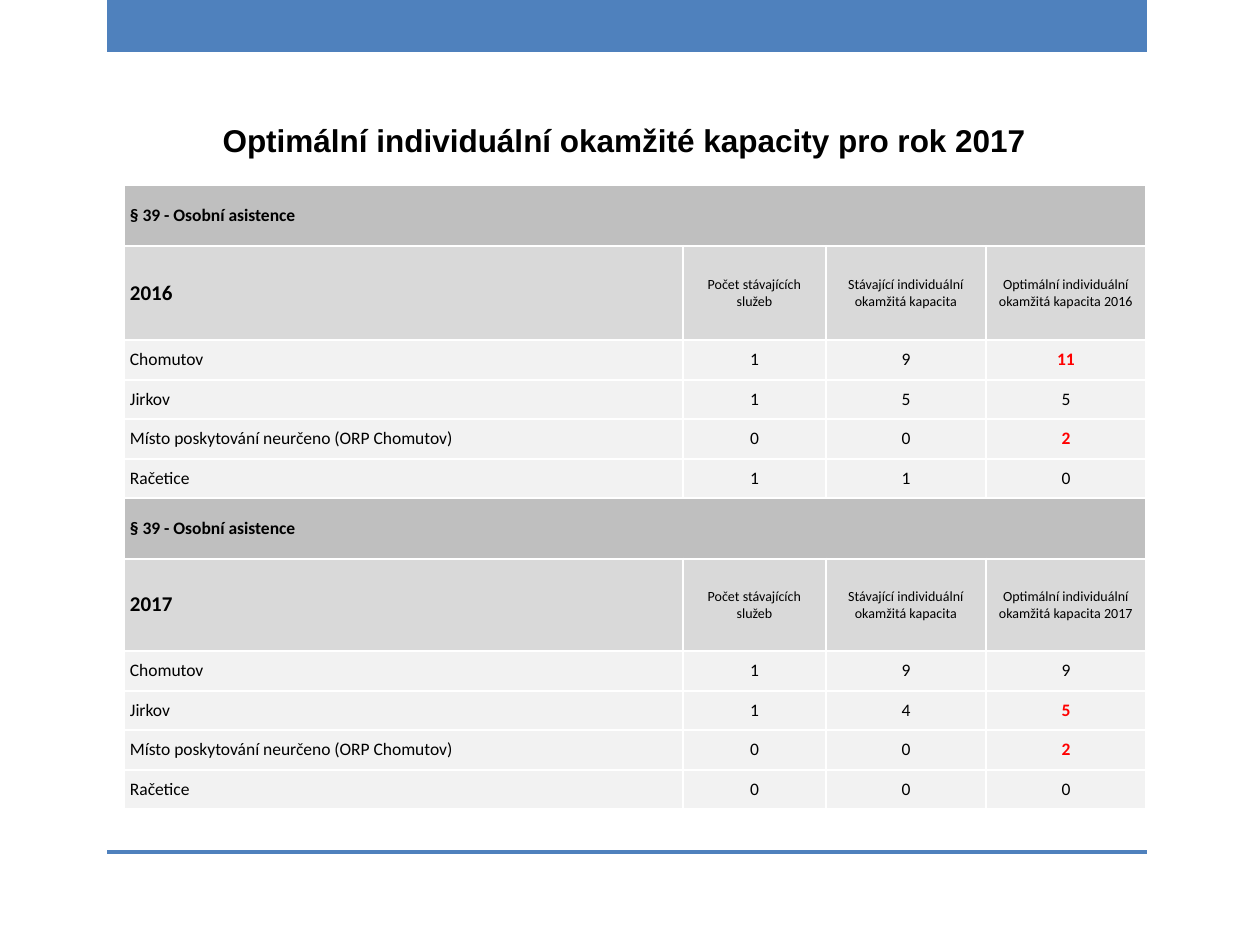
from lxml.etree import SubElement
from pptx import Presentation
from pptx.dml.color import RGBColor
from pptx.enum.shapes import MSO_SHAPE as SHAPE
from pptx.enum.text import MSO_ANCHOR as ANCHOR, PP_ALIGN as ALIGN
from pptx.oxml.ns import qn
from pptx.util import Pt

PX = 914400 / 126
BLUE, BLACK, RED, WHITE = "4F81BD", "000000", "FF0000", "FFFFFF"
SECTION_GRAY, HEADER_GRAY, ROW_GRAY = "BFBFBF", "D9D9D9", "F2F2F2"


def px(*lengths):
    """Turn pixel lengths into a list of EMU."""
    return [round(length * PX) for length in lengths]


def write(frame, text, size=10, bold=False, color=BLACK, font="Calibri", align=ALIGN.LEFT):
    paragraph = frame.paragraphs[0]
    paragraph.alignment = align
    run = paragraph.add_run()
    run.text = text
    run.font.name, run.font.size, run.font.bold = font, Pt(size), bold
    run.font.color.rgb = RGBColor.from_string(color)


prs = Presentation()
prs.slide_width, prs.slide_height = px(1260, 945)
slide = prs.slides.add_slide(prs.slide_layouts[5])

# Bands at the top and bottom of the page
for top, height in [(0, 52), (850, 4)]:
    band = slide.shapes.add_shape(SHAPE.RECTANGLE, *px(107, top, 1040, height))
    band.shadow.inherit = False
    band.fill.solid()
    band.fill.fore_color.rgb = RGBColor.from_string(BLUE)
    band.line.fill.background()

title = slide.shapes.title
title.left, title.top, title.width, title.height = px(210, 76, 912, 127)
title.text_frame.vertical_anchor = ANCHOR.MIDDLE
write(title.text_frame, "Optimální individuální okamžité kapacity pro rok 2017",
      size=18, bold=True, font="Arial")

# Capacities by place: services, current and optimal; red marks the highlighted optimum
years = {
    "2016": [("Chomutov", 1, 9, 11, RED),
             ("Jirkov", 1, 5, 5, BLACK),
             ("Místo poskytování neurčeno (ORP Chomutov)", 0, 0, 2, RED),
             ("Račetice", 1, 1, 0, BLACK)],
    "2017": [("Chomutov", 1, 9, 9, BLACK),
             ("Jirkov", 1, 4, 5, RED),
             ("Místo poskytování neurčeno (ORP Chomutov)", 0, 0, 2, RED),
             ("Račetice", 0, 0, 0, BLACK)],
}
row_heights = [61, 94, 40, 39, 40, 39, 61, 92, 40, 39, 40, 39]
column_widths = [559, 143, 160, 160]

table_frame = slide.shapes.add_table(
    len(row_heights), len(column_widths),
    *px(124, 185, sum(column_widths), sum(row_heights)))
capacities = table_frame.table
capacities.first_row = capacities.horz_banding = False
for row, height in zip(capacities.rows, px(*row_heights)):
    row.height = height
for column, width in zip(capacities.columns, px(*column_widths)):
    column.width = width

block_rows = len(row_heights) // len(years)
fills = [SECTION_GRAY, HEADER_GRAY] + [ROW_GRAY] * (block_rows - 2)
for r, row in enumerate(capacities.rows):
    for cell in row.cells:
        cell.margin_left, cell.margin_right = px(6, 6)
        cell.margin_top = cell.margin_bottom = 0
        cell.vertical_anchor = ANCHOR.MIDDLE
        properties = cell._tc.get_or_add_tcPr()
        for side in ("a:lnL", "a:lnR", "a:lnT", "a:lnB"):
            border = SubElement(properties, qn(side), w=str(Pt(1.5)))
            border_fill = SubElement(border, qn("a:solidFill"))
            SubElement(border_fill, qn("a:srgbClr"), val=WHITE)
        cell.fill.solid()
        cell.fill.fore_color.rgb = RGBColor.from_string(fills[r % block_rows])

for block, (year, places) in enumerate(years.items()):
    first = block * block_rows
    section = capacities.cell(first, 0)
    section.merge(capacities.cell(first, len(column_widths) - 1))
    write(section.text_frame, "§ 39 - Osobní asistence", bold=True)

    write(capacities.cell(first + 1, 0).text_frame, year, size=12, bold=True)
    headings = ["Počet stávajících služeb",
                "Stávající individuální okamžitá kapacita",
                f"Optimální individuální okamžitá kapacita {year}"]
    for c, heading in enumerate(headings, start=1):
        write(capacities.cell(first + 1, c).text_frame, heading, size=8, align=ALIGN.CENTER)

    for r, (place, services, current, optimal, mark) in enumerate(places, start=first + 2):
        write(capacities.cell(r, 0).text_frame, place)
        for c, (value, color) in enumerate(
                [(services, BLACK), (current, BLACK), (optimal, mark)], start=1):
            write(capacities.cell(r, c).text_frame, str(value),
                  bold=color == RED, color=color, align=ALIGN.CENTER)

prs.save("out.pptx")
